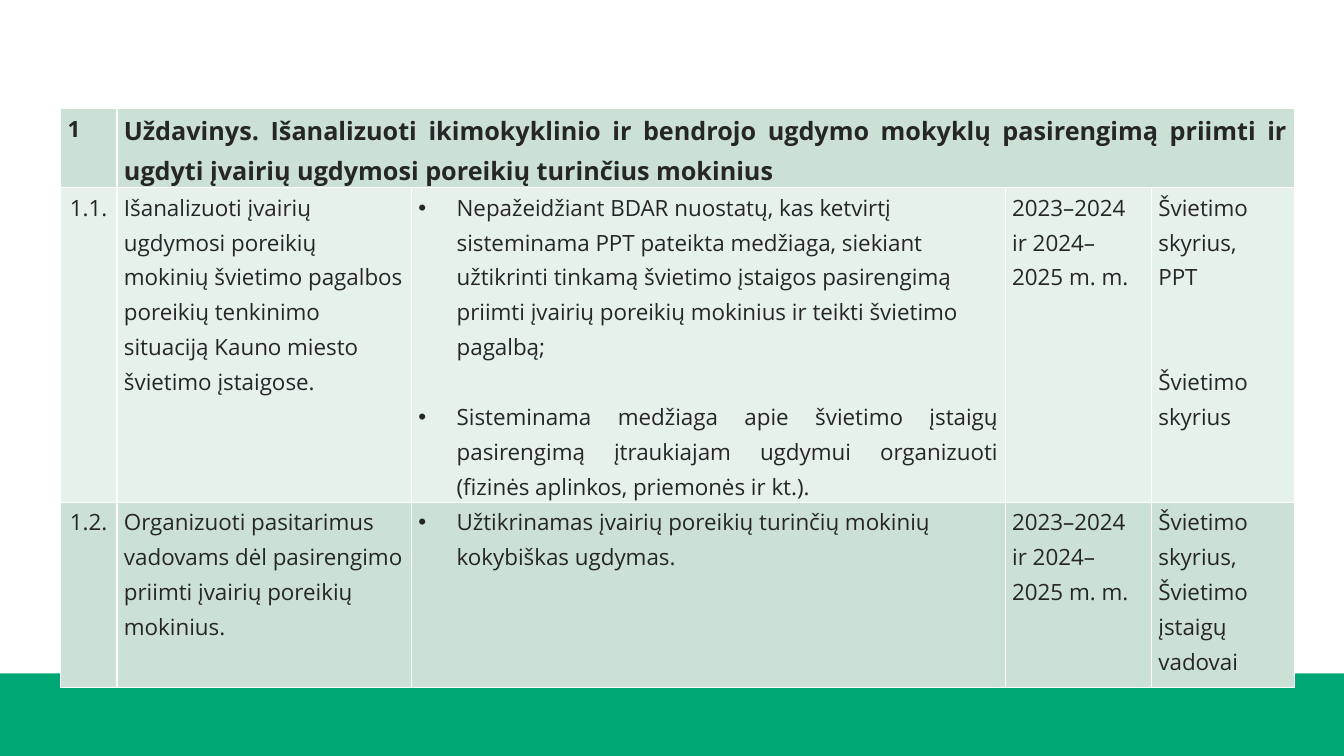
"""Builds a slide with a table of tasks, measures, terms and owners."""
from lxml import etree
from pptx import Presentation
from pptx.dml.color import RGBColor
from pptx.enum import shapes, text
from pptx.oxml import ns
from pptx.util import Inches, Pt

GREEN = RGBColor(0x00, 0xA8, 0x75)
MINT = RGBColor(0xCC, 0xE1, 0xD6)
PALE = RGBColor(0xE7, 0xF1, 0xEC)
INK = RGBColor(0x26, 0x26, 0x26)
WHITE = RGBColor(0xFF, 0xFF, 0xFF)
FONT = "Open Sans"
LEFT, CENTER, JUSTIFY = text.PP_ALIGN.LEFT, text.PP_ALIGN.CENTER, text.PP_ALIGN.JUSTIFY
LINE_GAP = 25

COLUMN_WIDTHS = [0.56, 2.92, 5.89, 1.45, 1.42]
ROW_HEIGHTS = [0.78, 3.11, 1.84]
ROW_FILLS = [MINT, PALE, MINT]
TERM = "2023–2024 ir 2024–2025 m. m."
HEADING = (
    "Uždavinys. Išanalizuoti ikimokyklinio ir bendrojo ugdymo mokyklų pasirengimą "
    "priimti ir ugdyti įvairių ugdymosi poreikių turinčius mokinius"
)
TASKS = [
    [
        ["1.1."],
        ["Išanalizuoti įvairių ugdymosi poreikių mokinių švietimo pagalbos poreikių "
         "tenkinimo situaciją Kauno miesto švietimo įstaigose."],
        ["Nepažeidžiant BDAR nuostatų, kas ketvirtį sisteminama PPT pateikta medžiaga, "
         "siekiant užtikrinti tinkamą švietimo įstaigos pasirengimą priimti įvairių "
         "poreikių mokinius ir teikti švietimo pagalbą;",
         "Sisteminama medžiaga apie švietimo įstaigų pasirengimą įtraukiajam ugdymui "
         "organizuoti (fizinės aplinkos, priemonės ir kt.)."],
        [TERM],
        ["Švietimo skyrius,", "PPT", "Švietimo skyrius"],
    ],
    [
        ["1.2."],
        ["Organizuoti pasitarimus vadovams dėl pasirengimo priimti įvairių poreikių mokinius."],
        ["Užtikrinamas įvairių poreikių turinčių mokinių kokybiškas ugdymas."],
        [TERM],
        ["Švietimo skyrius, Švietimo įstaigų vadovai"],
    ],
]


def add_band(slide):
    """Draw the green band along the bottom of the slide."""
    band = slide.shapes.add_shape(
        shapes.MSO_SHAPE.RECTANGLE, 0, Inches(6.68), Inches(13.33), Inches(0.82))
    band.shadow.inherit = False
    band.fill.solid()
    band.fill.fore_color.rgb = GREEN
    band.line.fill.background()


def add_borders(cell):
    """Give a cell thin white borders on all four sides."""
    properties = cell._tc.get_or_add_tcPr()
    for side in ("lnL", "lnR", "lnT", "lnB"):
        line = etree.SubElement(properties, ns.qn(f"a:{side}"), w=str(Pt(1)))
        fill = etree.SubElement(line, ns.qn("a:solidFill"))
        etree.SubElement(fill, ns.qn("a:srgbClr"), val=str(WHITE))


def style_cell(cell, color):
    """Set the borders, fill and margins of a cell."""
    add_borders(cell)
    cell.fill.solid()
    cell.fill.fore_color.rgb = color
    cell.margin_left = cell.margin_right = Inches(0.07)
    cell.margin_top = cell.margin_bottom = 0


def add_bullet(paragraph):
    """Turn a paragraph into a bullet with a hanging indent."""
    properties = paragraph._p.get_or_add_pPr()
    properties.set("marL", str(Inches(0.38)))
    properties.set("indent", str(-Inches(0.38)))
    etree.SubElement(properties, ns.qn("a:buFont"), typeface="Arial")
    etree.SubElement(properties, ns.qn("a:buChar"), char="•")


def write_cell(cell, lines, align=LEFT, size=16, bold=False, bullets=False):
    """Write paragraphs into a cell and format them."""
    cell.text_frame.text = "\n".join(lines)
    for paragraph in cell.text_frame.paragraphs:
        if bullets:
            add_bullet(paragraph)
        paragraph.alignment = align
        paragraph.line_spacing = 1.15
        for run in paragraph.runs:
            run.font.name = FONT
            run.font.size = Pt(size)
            run.font.bold = bold
            run.font.color.rgb = INK


def add_task_table(slide):
    """Add the empty, styled table and return it."""
    frame = slide.shapes.add_table(
        len(ROW_HEIGHTS), len(COLUMN_WIDTHS), Inches(0.6), Inches(1.08),
        Inches(sum(COLUMN_WIDTHS)), Inches(sum(ROW_HEIGHTS)))
    table = frame.table
    table.first_row = table.horz_banding = False
    for column, width in zip(table.columns, COLUMN_WIDTHS):
        column.width = Inches(width)
    for row, height, color in zip(table.rows, ROW_HEIGHTS, ROW_FILLS):
        row.height = Inches(height)
        for cell in row.cells:
            style_cell(cell, color)
    table.cell(0, 1).merge(table.cell(0, 4))
    return table


def fill_table(table):
    """Write the heading and the tasks into the table."""
    write_cell(table.cell(0, 0), ["1"], JUSTIFY, bold=True)
    write_cell(table.cell(0, 1), [HEADING], JUSTIFY, size=18, bold=True)
    for row, task in enumerate(TASKS, start=1):
        for column, lines in enumerate(task):
            align = CENTER if column == 0 else LEFT
            write_cell(table.cell(row, column), lines, align, bullets=column == 2)
    second_measure = table.cell(1, 2).text_frame.paragraphs[1]
    second_measure.alignment = JUSTIFY
    second_measure.space_before = Pt(LINE_GAP)
    second_owner = table.cell(1, 4).text_frame.paragraphs[2]
    second_owner.space_before = Pt(2 * LINE_GAP)


def main():
    """Build and save the presentation."""
    presentation = Presentation()
    presentation.slide_width = Inches(13.33)
    presentation.slide_height = Inches(7.5)
    slide = presentation.slides.add_slide(presentation.slide_layouts[6])
    add_band(slide)
    fill_table(add_task_table(slide))
    presentation.save("out.pptx")


if __name__ == "__main__":
    main()
